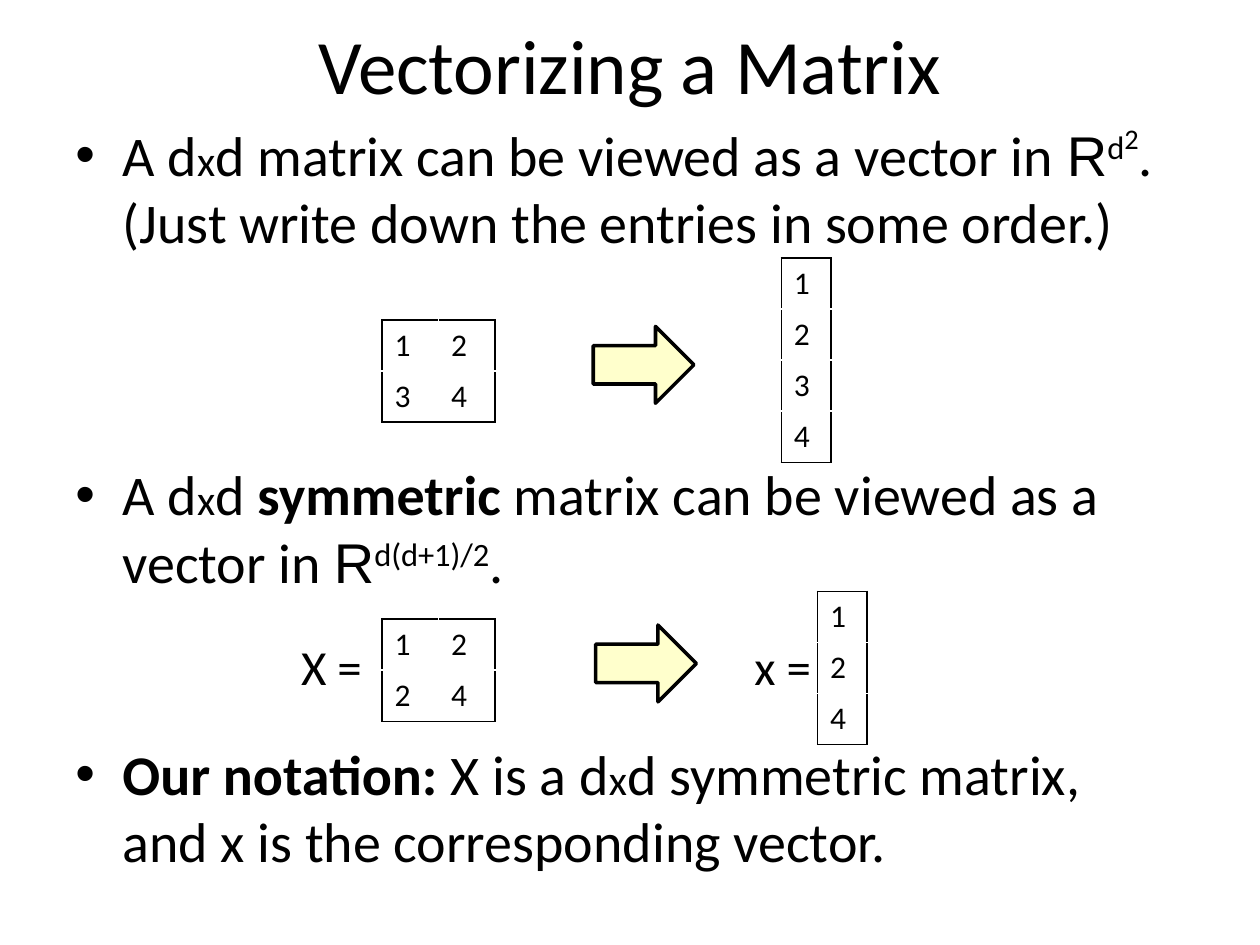
"""Build the slide that explains how a matrix becomes a vector."""
from lxml.etree import SubElement
from pptx import Presentation
from pptx.dml.color import RGBColor
from pptx.enum.shapes import MSO_SHAPE
from pptx.enum.text import MSO_ANCHOR, PP_ALIGN
from pptx.oxml.ns import qn
from pptx.util import Cm, Pt

BLACK = RGBColor(0x00, 0x00, 0x00)
CREAM = RGBColor(0xFF, 0xFF, 0xCC)

TITLE = "Vectorizing a Matrix"
SMALL = {"size": Pt(24)}
BOLD = {"bold": True}
REAL = {"name": "Arial"}
BULLETS = [
    (0, [("A d", {}), ("x", SMALL), ("d matrix can be viewed as a vector in ", {}),
         ("R", REAL), ("d", {"baseline": 30}), ("2", {"size": Pt(28), "baseline": 55}),
         (".\n(Just write down the entries in some order.)", {})]),
    (117, [("A d", {}), ("x", SMALL), ("d ", {}), ("symmetric", BOLD),
           (" matrix can be viewed as a vector in ", {}), ("R", REAL),
           ("d(d+1)/2", {"baseline": 30}), (".", {})]),
    (83, [("Our notation:", BOLD), (" X is a d", {}), ("x", SMALL),
          ("d symmetric matrix,\nand x is the corresponding vector.", {})]),
]
GRIDS = [
    (7.7, 6.45, 1.14, [[1, 2], [3, 4]]),
    (15.75, 5.2, 1.0, [[1], [2], [3], [4]]),
    (7.7, 12.48, 1.14, [[1, 2], [2, 4]]),
    (16.48, 11.92, 1.0, [[1], [2], [4]]),
]
ROW_HEIGHT = 1.03
ARROWS = [(11.96, 6.58), (12.01, 12.6)]
LABELS = [(5.82, 12.7, 1.98, "X ="), (14.96, 12.7, 1.9, "x =")]


def add_text(paragraph, text, size, formats=None):
    values = {"name": "Calibri", "size": Pt(size), "bold": False, **(formats or {})}
    baseline = values.pop("baseline", 0)
    for index, line in enumerate(text.split("\n")):
        if index:
            paragraph.add_line_break()
        run = paragraph.add_run()
        run.text = line
        run.font.color.rgb = BLACK
        for name, value in values.items():
            setattr(run.font, name, value)
        if baseline:
            run._r.get_or_add_rPr().set("baseline", str(baseline * 1000))


def add_box(slide, left, top, width, height, wrap=True):
    box = slide.shapes.add_textbox(Cm(left), Cm(top), Cm(width), Cm(height))
    box.text_frame.word_wrap = wrap
    return box.text_frame


def add_title(slide):
    frame = add_box(slide, 1.27, 0, 22.86, 2.57)
    frame.vertical_anchor = MSO_ANCHOR.MIDDLE
    frame.paragraphs[0].alignment = PP_ALIGN.CENTER
    add_text(frame.paragraphs[0], TITLE, 44)


def add_bullets(slide):
    frame = add_box(slide, 1.27, 2.31, 23.39, 15.98)
    for index, (space, runs) in enumerate(BULLETS):
        paragraph = frame.add_paragraph() if index else frame.paragraphs[0]
        paragraph.space_before = Pt(space)
        properties = paragraph._p.get_or_add_pPr()
        properties.set("marL", str(Cm(0.95)))
        properties.set("indent", str(-Cm(0.95)))
        SubElement(properties, qn("a:buFont"), typeface="Arial")
        SubElement(properties, qn("a:buChar"), char="•")
        for text, formats in runs:
            add_text(paragraph, text, 32, formats)


def add_border(cell, side):
    line = SubElement(cell._tc.get_or_add_tcPr(), qn(f"a:ln{side}"), w=str(Pt(1)))
    fill = SubElement(line, qn("a:solidFill"))
    SubElement(fill, qn("a:srgbClr"), val=str(BLACK))


def add_grid(slide, left, top, column_width, rows):
    row_count, column_count = len(rows), len(rows[0])
    table = slide.shapes.add_table(
        row_count, column_count, Cm(left), Cm(top),
        Cm(column_width * column_count), Cm(ROW_HEIGHT * row_count)).table
    table.first_row = table.horz_banding = False
    for row, values in enumerate(rows):
        for column, value in enumerate(values):
            cell = table.cell(row, column)
            outer = {"L": column == 0, "R": column == column_count - 1,
                     "T": row == 0, "B": row == row_count - 1}
            for side, is_outer in outer.items():
                if is_outer:
                    add_border(cell, side)
            cell.fill.background()
            add_text(cell.text_frame.paragraphs[0], str(value), 18)


def add_arrow(slide, left, top):
    shape = slide.shapes.add_shape(
        MSO_SHAPE.RIGHT_ARROW, Cm(left), Cm(top), Cm(2.03), Cm(1.55))
    shape.shadow.inherit = False
    shape.fill.solid()
    shape.fill.fore_color.rgb = CREAM
    shape.line.color.rgb = BLACK
    shape.line.width = Pt(2)


def main():
    presentation = Presentation()
    presentation.slide_width, presentation.slide_height = Cm(25.4), Cm(19.05)
    slide = presentation.slides.add_slide(presentation.slide_layouts[6])
    add_title(slide)
    add_bullets(slide)
    for grid in GRIDS:
        add_grid(slide, *grid)
    for arrow in ARROWS:
        add_arrow(slide, *arrow)
    for left, top, width, text in LABELS:
        frame = add_box(slide, left, top, width, 1.45, wrap=False)
        add_text(frame.paragraphs[0], text, 28)
    presentation.save("out.pptx")


if __name__ == "__main__":
    main()
